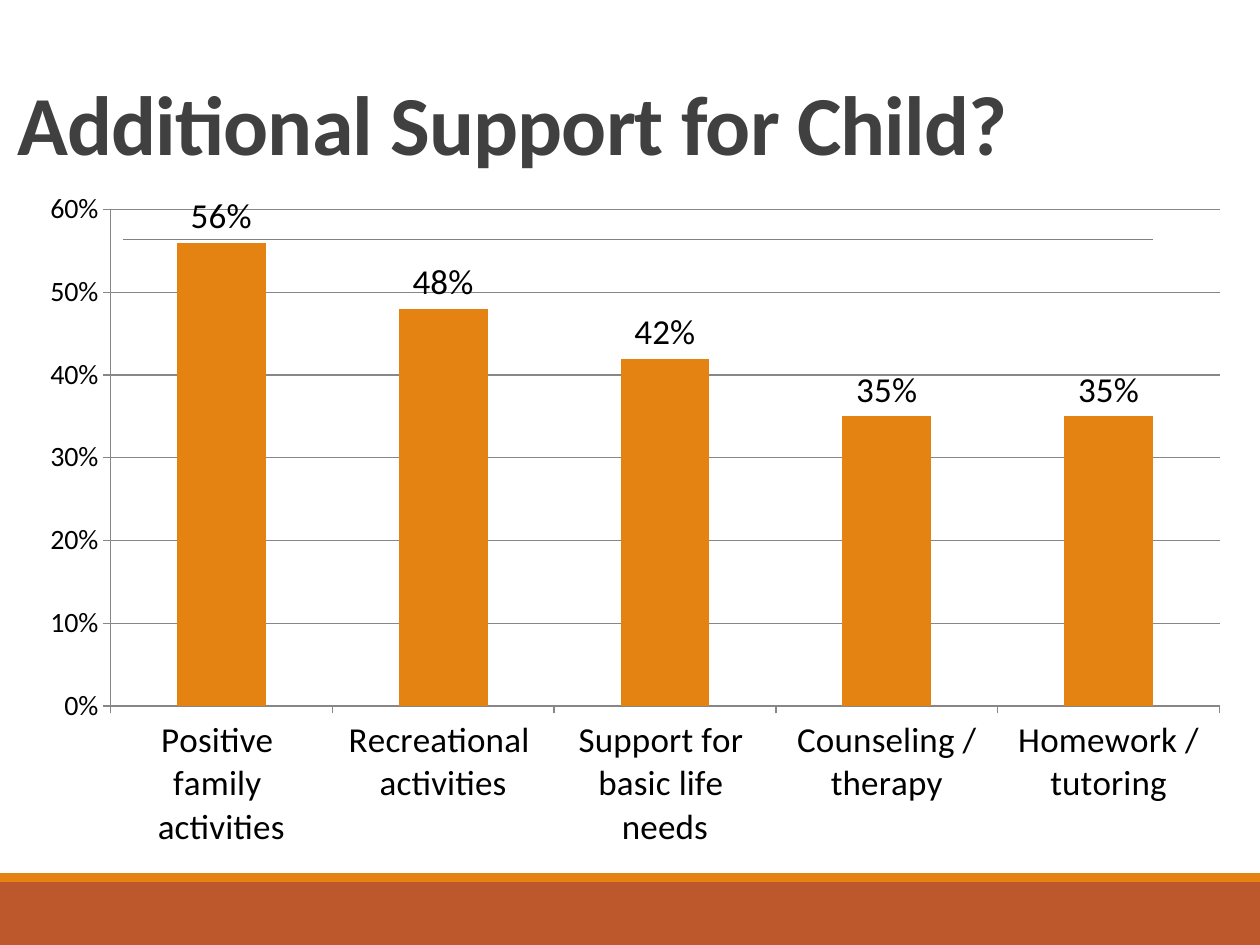
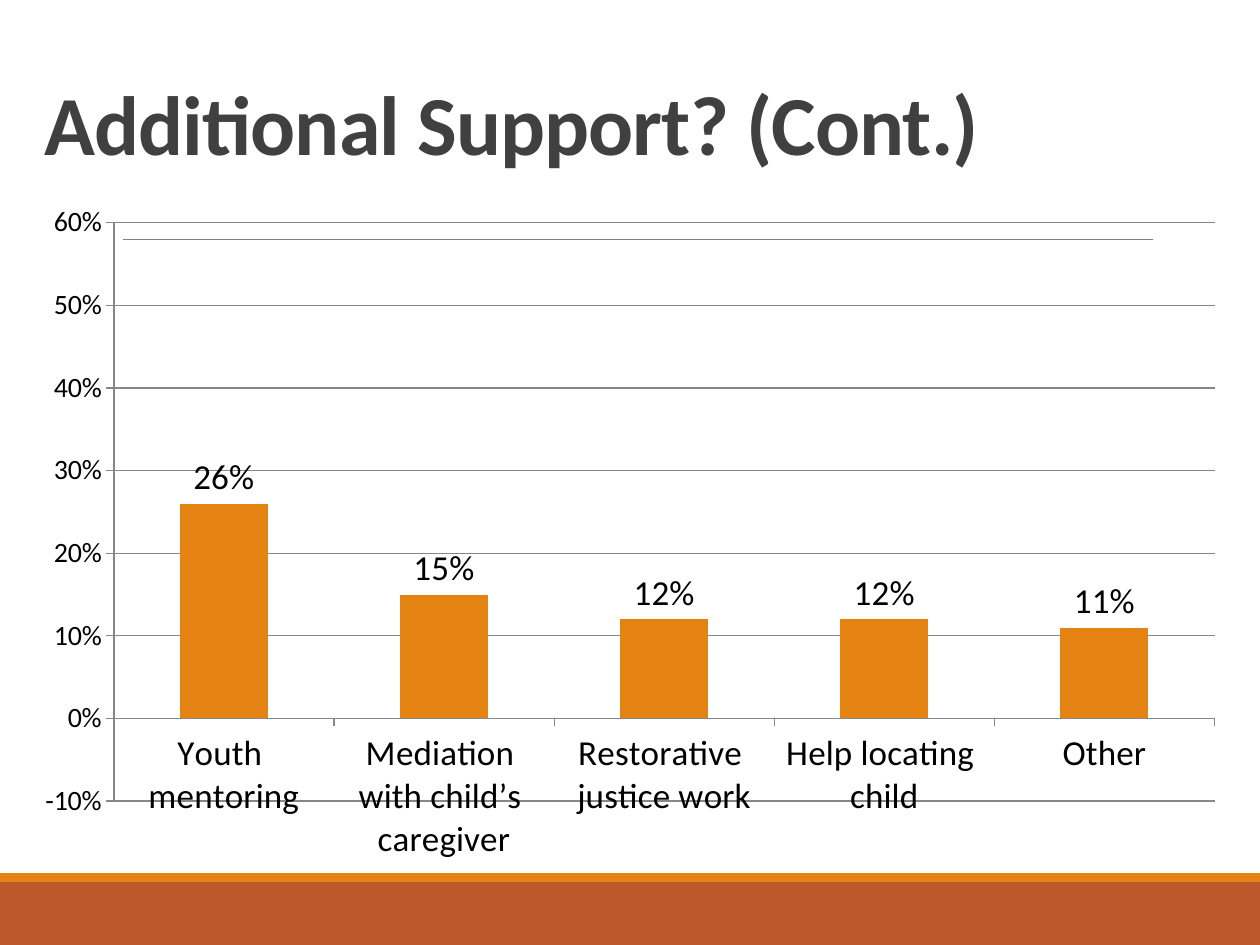
import pptx
import pptx.chart.data
import pptx.dml.color
import pptx.enum.chart
import pptx.enum.shapes
import pptx.enum.text
import pptx.oxml
import pptx.oxml.ns
import pptx.util

PX = pptx.util.Inches(1) / 126
FONT = "Calibri"
BRICK, ORANGE, RULE_GREY = "BD582C", "E48312", "808080"
TITLE_GREY, AXIS_GREY, BLACK = "404040", "878787", "000000"


def px(*lengths):
    """Turn px lengths into a list of EMU."""
    return [round(n * PX) for n in lengths]


def rgb(color):
    """Turn a hex string into a colour."""
    return pptx.dml.color.RGBColor.from_string(color)


def set_font(font, size, color=BLACK, bold=False):
    """Apply the deck's typeface with a size, colour and weight."""
    font.name = FONT
    font.size = pptx.util.Pt(size)
    font.bold = bold
    font.color.rgb = rgb(color)


def set_line(line, color, width):
    """Give a line its colour and width in points."""
    line.color.rgb = rgb(color)
    line.width = pptx.util.Pt(width)


def add_bands(slide):
    """Draw the footer bands and the rule under the title."""
    for box, color in (((0, 882, 1260, 63), BRICK), ((0, 873, 1260, 9), ORANGE)):
        sp = slide.shapes.add_shape(pptx.enum.shapes.MSO_SHAPE.RECTANGLE, *px(*box))
        sp.shadow.inherit = False
        sp.fill.solid()
        sp.fill.fore_color.rgb = rgb(color)
        sp.line.fill.background()
    rule = slide.shapes.add_connector(
        pptx.enum.shapes.MSO_CONNECTOR.STRAIGHT, *px(123, 239, 1153, 239))
    set_line(rule.line, RULE_GREY, 0.5)
    rule._element.spPr.append(pptx.oxml.parse_xml(
        f"<a:effectLst {pptx.oxml.ns.nsdecls('a')}/>"))


def set_title(slide, box, text):
    """Move the title placeholder to its box and format its text."""
    title = slide.shapes.title
    title.left, title.top, title.width, title.height = px(*box)
    tf = title.text_frame
    tf.text = text
    tf.word_wrap = True
    tf.auto_size = pptx.enum.text.MSO_AUTO_SIZE.NONE
    tf.vertical_anchor = pptx.enum.text.MSO_ANCHOR.BOTTOM
    p = tf.paragraphs[0]
    p.alignment = pptx.enum.text.PP_ALIGN.LEFT
    p.line_spacing = 0.85
    r = p.runs[0]
    set_font(r.font, 48, TITLE_GREY, True)
    r._r.get_or_add_rPr().set("spc", "-50")


def style_axis(axis, size):
    """Format an axis line, its ticks and its labels."""
    axis.major_tick_mark = pptx.enum.chart.XL_TICK_MARK.OUTSIDE
    axis.minor_tick_mark = pptx.enum.chart.XL_TICK_MARK.NONE
    set_font(axis.tick_labels.font, size)
    set_line(axis.format.line, AXIS_GREY, 0.75)


def add_support_chart(slide, box, shares, lowest):
    """Add a column chart of the share asking for each kind of support."""
    data = pptx.chart.data.CategoryChartData(number_format="0%")
    data.categories = list(shares)
    data.add_series("Series 1", list(shares.values()))
    chart = slide.shapes.add_chart(
        pptx.enum.chart.XL_CHART_TYPE.COLUMN_CLUSTERED, *px(*box), data).chart
    chart.has_legend = False
    chart.has_title = False
    set_font(chart.font, 10)

    style_axis(chart.category_axis, 20)
    axis = chart.value_axis
    style_axis(axis, 16)
    axis.minimum_scale, axis.maximum_scale, axis.major_unit = lowest, 0.6, 0.1
    axis.has_major_gridlines = True
    set_line(axis.major_gridlines.format.line, AXIS_GREY, 0.75)
    axis.tick_labels.number_format = "0%"
    axis.tick_labels.number_format_is_linked = False

    plot = chart.plots[0]
    plot.gap_width = 150
    plot.vary_by_categories = False
    fill = plot.series[0].format.fill
    fill.solid()
    fill.fore_color.rgb = rgb(ORANGE)
    plot.has_data_labels = True
    labels = plot.data_labels
    labels.show_value = True
    labels.number_format = "0%"
    labels.number_format_is_linked = False
    labels.position = pptx.enum.chart.XL_LABEL_POSITION.OUTSIDE_END
    set_font(labels.font, 20)


def add_chart_slide(prs, title, title_left, chart_at, shares, lowest):
    """Add a slide with the bands, a title and one chart."""
    slide = prs.slides.add_slide(prs.slide_layouts.get_by_name("Title Only"))
    add_bands(slide)
    set_title(slide, (title_left, 21, 1260, 158), title)
    add_support_chart(slide, (*chart_at, 1218, 683), shares, lowest)


def main():
    """Build and save the deck."""
    prs = pptx.Presentation()
    prs.slide_width, prs.slide_height = px(1260, 945)
    add_chart_slide(prs, "Additional Support for Child?", 5, (26, 179), {
        "Positive \nfamily \nactivities": 0.56,
        "Recreational \nactivities": 0.48,
        "Support for \nbasic life \nneeds": 0.42,
        "Counseling /\ntherapy": 0.35,
        "Homework /\ntutoring": 0.35,
    }, 0)
    add_chart_slide(prs, "Additional Support? (Cont.)", 32, (21, 192), {
        "Youth \nmentoring": 0.26,
        "Mediation \nwith child’s \ncaregiver": 0.15,
        "Restorative \njustice work": 0.12,
        "Help locating \nchild": 0.12,
        "Other": 0.11,
    }, -0.1)
    prs.save("out.pptx")


if __name__ == "__main__":
    main()
